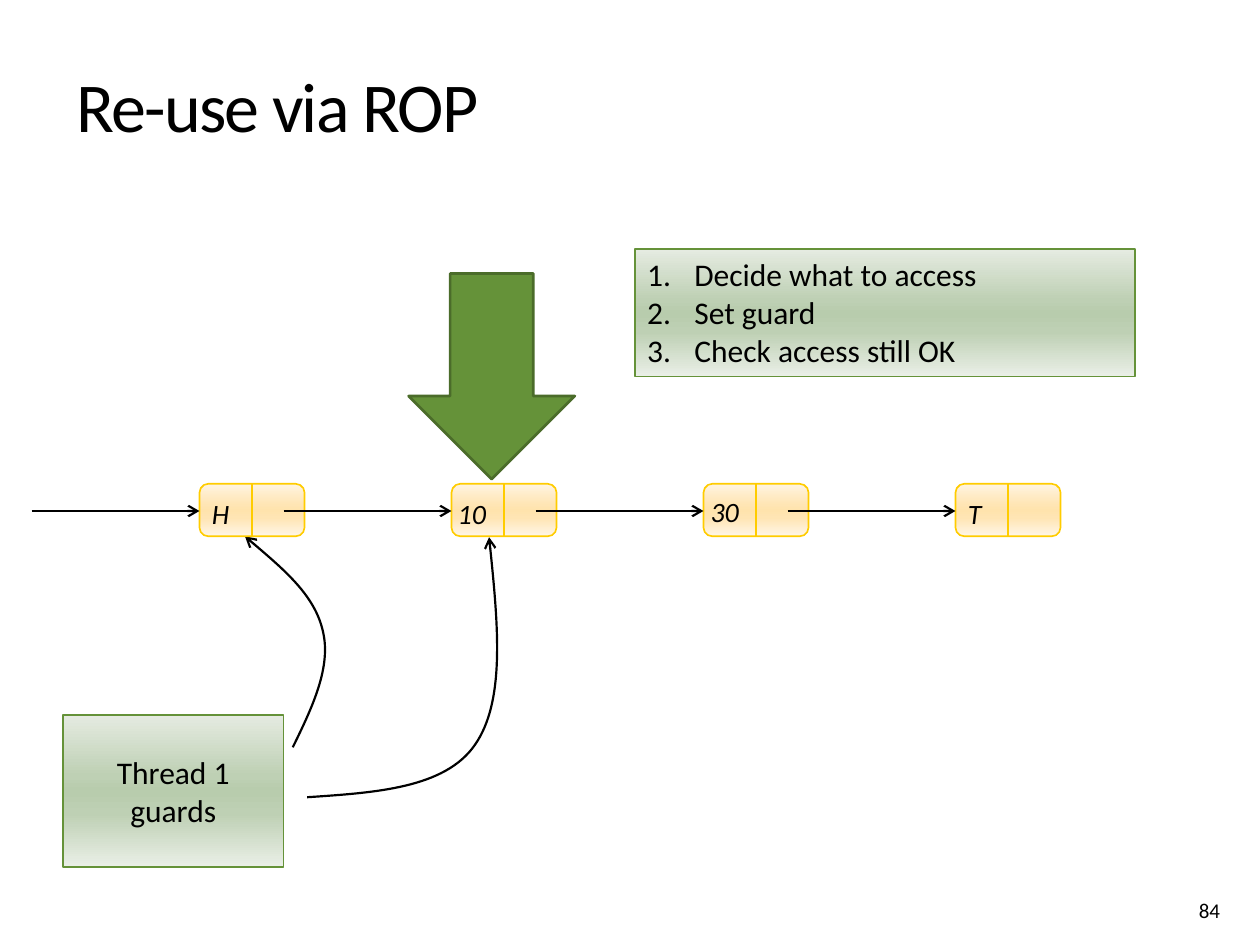
from copy import deepcopy

from lxml import etree
from pptx import Presentation
from pptx.dml.color import RGBColor
from pptx.enum.shapes import MSO_CONNECTOR, MSO_SHAPE
from pptx.enum.text import MSO_ANCHOR, PP_ALIGN
from pptx.oxml.ns import qn
from pptx.util import Pt

STRAIGHT = MSO_CONNECTOR.STRAIGHT
RECTANGLE, ROUNDED = MSO_SHAPE.RECTANGLE, MSO_SHAPE.ROUNDED_RECTANGLE
DOWN_ARROW = MSO_SHAPE.DOWN_ARROW
TOP, MIDDLE, BOTTOM = MSO_ANCHOR.TOP, MSO_ANCHOR.MIDDLE, MSO_ANCHOR.BOTTOM
LEFT, CENTER = PP_ALIGN.LEFT, PP_ALIGN.CENTER

FONT = "Calibri"
BLACK = RGBColor(0x00, 0x00, 0x00)
GREEN = RGBColor(0x65, 0x92, 0x39)
DARK_GREEN = RGBColor(0x4B, 0x6C, 0x2A)
YELLOW = RGBColor(0xFF, 0xCC, 0x00)
STOPS = (0, 0.4, 0.5, 0.65, 1)
GREEN_FADE = [RGBColor.from_string(c) for c in
              ("E5EBE1", "BED0B4", "B8CCAD", "BED0B4", "EAEFE7")]
YELLOW_FADE = [RGBColor.from_string(c) for c in
               ("FFF4E1", "FFE5B4", "FFE3AD", "FFE5B4", "FFF6E7")]


def stroke(shape, color, width, arrow=False):
    """Outline a shape or line, without shadow, optionally with an arrowhead."""
    shape.line.color.rgb = color
    shape.line.width = Pt(width)
    properties = shape._element.spPr
    if arrow:
        etree.SubElement(properties.get_or_add_ln(), qn("a:tailEnd"), type="arrow")
    etree.SubElement(properties, qn("a:effectLst"))


def fade(shape, colors):
    """Fill a shape with a vertical gradient of five stops."""
    shape.fill.gradient()
    shape.fill.gradient_angle = 270
    stop_list = shape._element.spPr.find(qn("a:gradFill")).find(qn("a:gsLst"))
    while len(stop_list) < len(STOPS):
        stop_list.append(deepcopy(stop_list[-1]))
    for stop, position, color in zip(shape.fill.gradient_stops, STOPS, colors):
        stop.position = position
        stop.color.rgb = color


deck = Presentation()
deck.slide_width, deck.slide_height = Pt(720), Pt(540)
page = deck.slides.add_slide(deck.slide_layouts[5])
shapes = page.shapes

# Title
title = shapes.title
title.left, title.top, title.width, title.height = Pt(36.5), Pt(40.3), Pt(635), Pt(60)
title.text_frame.text = "Re-use via ROP"

# Arrow marking the current node
marker = shapes.add_shape(DOWN_ARROW, Pt(233.5), Pt(156.3), Pt(95), Pt(117.5))
marker.fill.solid()
marker.fill.fore_color.rgb = GREEN
stroke(marker, DARK_GREEN, 1.5)

# Green boxes: steps and guards
steps = shapes.add_shape(RECTANGLE, Pt(362.7), Pt(142.4), Pt(286), Pt(72.7))
steps.text_frame.text = "Decide what to access\nSet guard\nCheck access still OK"
guards = shapes.add_shape(RECTANGLE, Pt(36), Pt(408.5), Pt(126), Pt(87))
guards.text_frame.text = "Thread 1 guards"
for box in (steps, guards):
    fade(box, GREEN_FADE)
    stroke(box, GREEN, 0.94)
for para in steps.text_frame.paragraphs:
    properties = para._p.get_or_add_pPr()
    properties.set("marL", str(Pt(27)))
    properties.set("indent", str(-Pt(27)))
    etree.SubElement(properties, qn("a:buFont"), typeface="+mj-lt")
    etree.SubElement(properties, qn("a:buAutoNum"), type="arabicPeriod")

# Curved guard pointers: start point, then three points per Bezier segment
POINTERS = [
    [(167.3, 427), (178.6, 404), (189.4, 381), (184.5, 360.7),
     (180, 340.5), (159.8, 323.3), (140, 306.5)],
    [(175.5, 455.6), (214.6, 453), (254.2, 450.5), (271.4, 425.7),
     (288.7, 401), (284.4, 353.8), (279.5, 307)],
]
for points in POINTERS:
    start, *rest = [(Pt(x), Pt(y)) for x, y in points]
    builder = shapes.build_freeform(*start)
    builder.add_line_segments(rest, close=False)
    curve = builder.convert_to_shape()
    curve.fill.background()
    stroke(curve, BLACK, 1.25, arrow=True)
    segments = list(curve._element.iter(qn("a:lnTo")))
    for first in range(0, len(segments), 3):
        bezier = etree.SubElement(segments[0].getparent(), qn("a:cubicBezTo"))
        for segment in segments[first:first + 3]:
            bezier.append(segment[0])
    for segment in segments:
        segment.getparent().remove(segment)

# List nodes, each split into value and next pointer
PITCH, NODE_LEFT, NODE_TOP = 144, 114, 276.5
NODE_WIDTH, NODE_HEIGHT = 60, 30
for index in range(4):
    left = NODE_LEFT + index * PITCH
    node = shapes.add_shape(ROUNDED, Pt(left), Pt(NODE_TOP), Pt(NODE_WIDTH), Pt(NODE_HEIGHT))
    node.adjustments[0] = 0.167
    fade(node, YELLOW_FADE)
    stroke(node, YELLOW, 0.94)
    middle = Pt(left + NODE_WIDTH / 2)
    divider = shapes.add_connector(STRAIGHT, middle, Pt(NODE_TOP),
                                   middle, Pt(NODE_TOP + NODE_HEIGHT))
    stroke(divider, YELLOW, 1.5)

# Node values: text, left, top, width, wrap
VALUES = [("H", 114, 280, 28, False), ("10", 254.5, 280, 33, True),
          ("30", 399, 278.8, 33, True), ("T", 546, 280, 26, False)]
values = []
for text, left, top, width, wrap in VALUES:
    value = shapes.add_textbox(Pt(left), Pt(top), Pt(width), Pt(26.6))
    value.text_frame.text = text
    value.text_frame.word_wrap = wrap
    values.append(value)

# Links between nodes
for index in range(4):
    end = NODE_LEFT + index * PITCH
    link = shapes.add_connector(STRAIGHT, Pt(end - 96), Pt(292), Pt(end), Pt(292))
    stroke(link, BLACK, 1.25, arrow=True)

# Page number
number = shapes.add_textbox(Pt(678), Pt(502), Pt(36), Pt(29))
number.text_frame.text = "84"
number.text_frame.word_wrap = True

# Text formatting: box, size, alignment, anchor
STYLES = [(title, 40, LEFT, TOP), (steps, 18, LEFT, TOP),
          (guards, 18, CENTER, MIDDLE), (number, 12, LEFT, BOTTOM)]
STYLES += [(value, 16, LEFT, TOP) for value in values]
for box, size, alignment, anchor in STYLES:
    box.text_frame.vertical_anchor = anchor
    for para in box.text_frame.paragraphs:
        para.alignment = alignment
        for span in para.runs:
            span.font.name = FONT
            span.font.size = Pt(size)
            span.font.color.rgb = BLACK
            if box in values:
                span.font.italic = True
title_para = title.text_frame.paragraphs[0]
title_para.line_spacing = Pt(40)
title_para.runs[0].font._element.set("spc", "-100")

deck.save("out.pptx")
